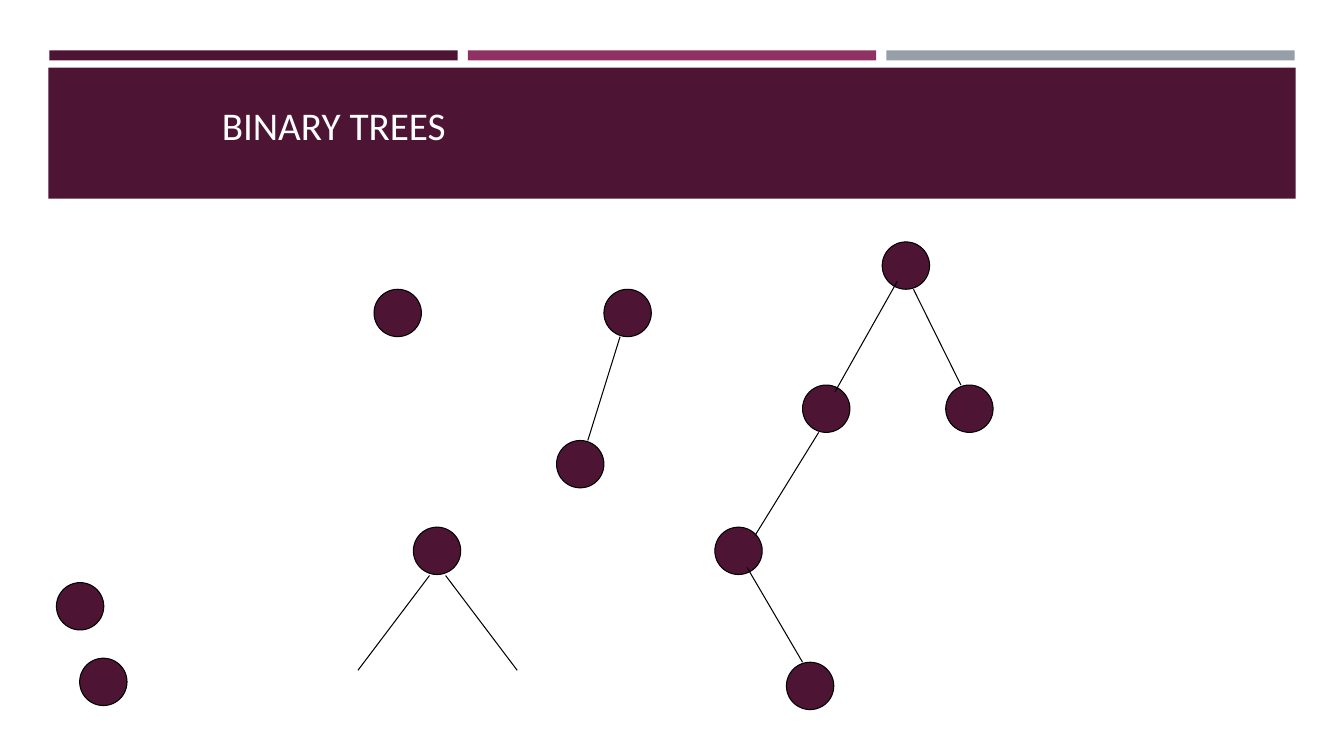
from pptx import Presentation
from pptx.dml.color import RGBColor
from pptx.enum import shapes, text
from pptx.oxml import ns, xmlchemy
from pptx.util import Inches, Pt

PLUM, MAGENTA, GREY = "4D1434", "903163", "969FA7"
BLACK, WHITE = "000000", "FFFFFF"
NODE_SIZE = 0.47

# Left and top of each node
NODES = [
    (3.71, 2.87), (5.99, 2.87), (5.52, 4.37), (4.1, 5.23),
    (0.56, 5.78), (0.79, 6.53), (7.8, 6.57), (7.09, 5.23),
    (9.38, 3.82), (7.96, 3.82), (8.75, 2.4),
]

# Start and end of each edge
EDGES = [
    (6.15, 3.34, 5.83, 4.37),
    (4.26, 5.71, 3.55, 6.65),
    (4.42, 5.71, 5.13, 6.65),
    (8.9, 2.79, 8.28, 3.89),
    (9.06, 2.87, 9.53, 3.82),
    (8.12, 4.29, 7.49, 5.31),
    (7.41, 5.63, 7.96, 6.57),
]


def color(value):
    return RGBColor.from_string(value)


class TreeSlide:
    """Holds the slide and the style of its elements."""

    font = "Calibri"
    title_size = 28
    line_width = 0.75

    def __init__(self, presentation):
        self.slide = presentation.slides.add_slide(presentation.slide_layouts[5])

    def outline(self, line):
        line.color.rgb = color(BLACK)
        line.width = Pt(self.line_width)

    def shape(self, kind, left, top, width, height, fill):
        shape = self.slide.shapes.add_shape(
            kind, Inches(left), Inches(top), Inches(width), Inches(height))
        shape.shadow.inherit = False
        shape.fill.solid()
        shape.fill.fore_color.rgb = color(fill)
        return shape

    def bar(self, left, top, width, height, fill):
        bar = self.shape(shapes.MSO_SHAPE.RECTANGLE, left, top, width, height, fill)
        bar.line.fill.background()

    def node(self, left, top):
        node = self.shape(
            shapes.MSO_SHAPE.OVAL, left, top, NODE_SIZE, NODE_SIZE, PLUM)
        self.outline(node.line)

    def edge(self, start_x, start_y, end_x, end_y):
        edge = self.slide.shapes.add_connector(
            shapes.MSO_CONNECTOR.STRAIGHT,
            Inches(start_x), Inches(start_y), Inches(end_x), Inches(end_y))
        self.outline(edge.line)
        edge._element.spPr.append(xmlchemy.OxmlElement("a:effectLst"))

    def title(self, wording, left, top, width, height):
        title = self.slide.shapes.title
        title.left, title.top = Inches(left), Inches(top)
        title.width, title.height = Inches(width), Inches(height)
        frame = title.text_frame
        frame.text = wording
        frame.word_wrap = True
        frame.auto_size = text.MSO_AUTO_SIZE.NONE
        frame.vertical_anchor = text.MSO_ANCHOR.BOTTOM
        paragraph = frame.paragraphs[0]
        paragraph.alignment = text.PP_ALIGN.LEFT
        paragraph.line_spacing = 0.9
        font = paragraph.runs[0].font
        font.name, font.size = self.font, Pt(self.title_size)
        font.color.rgb = color(WHITE)
        # Bring the title in front of the banner
        self.slide.shapes._spTree.append(title._element)


def main():
    presentation = Presentation()
    presentation.slide_width = Inches(13.33)
    presentation.slide_height = Inches(7.5)
    tree_slide = TreeSlide(presentation)

    for column, fill in enumerate((PLUM, MAGENTA, GREY)):
        tree_slide.bar(0.49 + 4.15 * column, 0.5, 4.05, 0.1, fill)
    tree_slide.bar(0.48, 0.67, 12.37, 1.3, PLUM)
    tree_slide.title("BINARY TREES", 2.1, 0.28, 9, 1.25)

    for node in NODES:
        tree_slide.node(*node)
    for edge in EDGES:
        tree_slide.edge(*edge)

    presentation.save("out.pptx")


if __name__ == "__main__":
    main()
